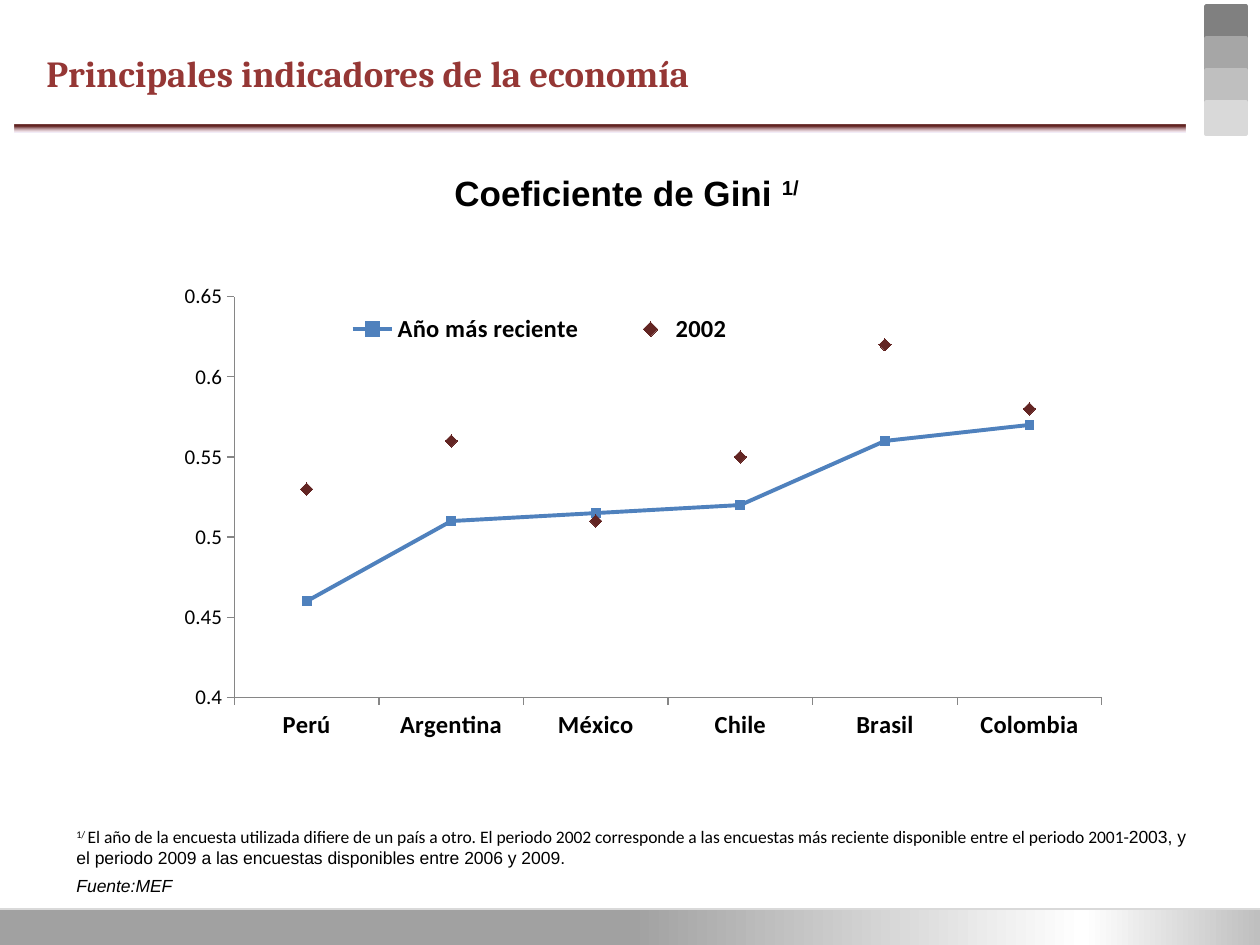
from copy import deepcopy

from pptx import Presentation
from pptx.chart.data import CategoryChartData
from pptx.dml.color import RGBColor
from pptx.enum.chart import XL_CHART_TYPE as CT, XL_LEGEND_POSITION as LP
from pptx.enum.chart import XL_MARKER_STYLE as MS, XL_TICK_MARK as TM
from pptx.enum.shapes import MSO_CONNECTOR as CONN, MSO_SHAPE as SHAPE
from pptx.oxml import parse_xml
from pptx.oxml.ns import nsdecls, qn
from pptx.util import Pt

SCALE = 914400 / 126
COUNTRIES = ["Perú", "Argentina", "México", "Chile", "Brasil", "Colombia"]
GINI = {
    "Año más reciente": [0.46, 0.51, 0.515, 0.52, 0.56, 0.57],
    "2002": [0.53, 0.56, 0.51, 0.55, 0.62, 0.58],
}


def px(*lengths):
    """Turn pixel lengths into EMU."""
    return [round(n * SCALE) for n in lengths]


def rgb(value):
    """Return the colour for a hex string."""
    return RGBColor.from_string(value)


def set_font(font, size, bold=False, name="Calibri", color="000000", italic=False):
    """Set the face, size, style and colour of a font."""
    font.name, font.size, font.bold, font.italic = name, Pt(size), bold, italic
    font.color.rgb = rgb(color)


def add_text(slide, box, runs, size, wrap=True, **fmt):
    """Add a text box from (text, font name, baseline) runs."""
    tf = slide.shapes.add_textbox(*px(*box)).text_frame
    tf.word_wrap = wrap
    p = tf.paragraphs[0]
    for text, name, baseline in runs:
        r = p.add_run()
        r.text = text
        set_font(r.font, size, name=name, **fmt)
        if baseline:
            r._r.get_or_add_rPr().set("baseline", str(baseline * 1000))


def add_rect(slide, box, fill=None):
    """Add a rectangle, filled and outlined when a colour is given."""
    sp = slide.shapes.add_shape(SHAPE.RECTANGLE, *px(*box))
    sp.shadow.inherit = False
    if fill:
        sp.fill.solid()
        sp.fill.fore_color.rgb = sp.line.color.rgb = rgb(fill)
        sp.line.width = Pt(2)
    else:
        sp.line.fill.background()
    return sp


def add_gradient(slide, box, stops, angle):
    """Add a rectangle with (position, colour, opacity) gradient stops."""
    sp = add_rect(slide, box)
    sp.fill.gradient()
    sp.fill.gradient_angle = 0
    grad = sp._element.spPr.find(qn("a:gradFill"))
    grad.find(qn("a:lin")).set("ang", str(angle * 60000))
    items = "".join(
        f'<a:gs pos="{pos * 1000}"><a:srgbClr val="{color}">'
        f'<a:alpha val="{alpha * 1000}"/></a:srgbClr></a:gs>'
        for pos, color, alpha in stops)
    grad.replace(grad.find(qn("a:gsLst")),
                 parse_xml(f'<a:gsLst {nsdecls("a")}>{items}</a:gsLst>'))


def set_layout(parent, index, box, inner=False):
    """Place a chart part by fractions of the chart area."""
    for old in parent.findall(qn("c:layout")):
        parent.remove(old)
    target = '<c:layoutTarget val="inner"/>' if inner else ""
    modes = '<c:xMode val="edge"/><c:yMode val="edge"/>'
    sizes = "".join(f'<c:{k} val="{v}"/>' for k, v in zip("xywh", box))
    parent.insert(index, parse_xml(
        f'<c:layout {nsdecls("c")}><c:manualLayout>{target}{modes}{sizes}'
        '</c:manualLayout></c:layout>'))


def move_to_second_axis(plot_area):
    """Move the last series to a hidden second pair of axes."""
    first = plot_area.find(qn("c:lineChart"))
    second = deepcopy(first)
    first.remove(first.findall(qn("c:ser"))[-1])
    second.remove(second.find(qn("c:ser")))
    first.addnext(second)
    axes = [plot_area.find(qn(tag)) for tag in ("c:catAx", "c:valAx")]
    ids = {ax.find(qn("c:axId")).get("val"): str(501 + i) for i, ax in enumerate(axes)}
    copies = [deepcopy(ax) for ax in axes]
    for part in [second, *copies]:
        for ref in part.findall(qn("c:axId")) + part.findall(qn("c:crossAx")):
            ref.set("val", ids[ref.get("val")])
    for ax in reversed(copies):
        ax.find(qn("c:delete")).set("val", "1")
        axes[-1].addnext(ax)
    copies[1].find(qn("c:crosses")).set("val", "max")


def add_gini_chart(slide, box):
    """Add the line chart of Gini coefficients."""
    data = CategoryChartData()
    data.categories = COUNTRIES
    for name, values in GINI.items():
        data.add_series(name, values)
    chart = slide.shapes.add_chart(CT.LINE_MARKERS, *px(*box), data).chart
    chart.has_title = False
    set_font(chart.font, 10)
    cat, val = chart.category_axis, chart.value_axis
    for axis, size, bold in ((cat, 14, True), (val, 12, False)):
        set_font(axis.tick_labels.font, size, bold)
        axis.major_tick_mark, axis.minor_tick_mark = TM.OUTSIDE, TM.NONE
        axis.has_major_gridlines = False
        axis.format.line.color.rgb = rgb("868686")
    val.minimum_scale, val.maximum_scale, val.major_unit = 0.4, 0.65, 0.05
    markers = ((MS.SQUARE, 5, "4F81BD"), (MS.DIAMOND, 7, "632523"))
    for s, (style, size, color) in zip(chart.plots[0].series, markers):
        s.smooth = False
        s.marker.style, s.marker.size = style, size
        s.marker.format.fill.solid()
        s.marker.format.fill.fore_color.rgb = rgb(color)
        s.marker.format.line.color.rgb = rgb(color)
        s.format.line.width = Pt(2.25)
        s.format.line.color.rgb = rgb(color)
    s.format.line.fill.background()
    chart.has_legend = True
    legend = chart.legend
    legend.position, legend.include_in_layout = LP.RIGHT, False
    set_font(legend.font, 14, True)
    set_layout(legend._element, 1, (0.18, 0.18, 0.46, 0.08))
    plot_area = chart._chartSpace.chart.plotArea
    set_layout(plot_area, 0, (0.106, 0.166, 0.864, 0.667), inner=True)
    move_to_second_axis(plot_area)


def add_footer(slide, left, top, width, height):
    """Add the grey band and the rule near its top edge."""
    stops = ((50, "A1A1A1", 100), (86, "FFFFFF", 100), (100, "BFBFBF", 100))
    add_gradient(slide, (left, top, width, height), stops, 0)
    rule = slide.shapes.add_connector(
        CONN.STRAIGHT, *px(left, top + 1, left + width, top + 1))
    rule.line.color.rgb, rule.line.width = rgb("D9D9D9"), Pt(0.75)
    rule._element.spPr.append(parse_xml(f'<a:effectLst {nsdecls("a")}/>'))


def add_header(slide, left, top, width, height):
    """Add the grey squares, the title and the red band below it."""
    side = 32
    for i, color in enumerate(("808080", "A6A6A6", "BFBFBF", "D9D9D9")):
        add_rect(slide, (left + width - 40, top + i * side, 40, side), color)
    stops = ((23, "632523", 100), (97, "FFEBFA", 43), (100, "85C2FF", 100))
    add_gradient(slide, (left, top + height - 8, 1171, 8), stops, 90)
    add_text(slide, (left + 19, top + 39, 922, 79),
             [("Principales indicadores de la economía", "Cambria", 0)],
             21, bold=True, color="953735")


def add_notes(slide, left, top, width):
    """Add the footnote and the source below the chart."""
    add_text(slide, (left, top, width, 55), [
        ("1/ ", "Calibri", 30),
        ("El año de la encuesta utilizada difiere de un país a otro. El periodo 2002 "
         "corresponde a las encuestas más reciente disponible entre el periodo 2001-",
         "Calibri", 0),
        ("2003, y el periodo 2009 a las encuestas disponibles entre 2006 y 2009.",
         "Arial", 0)], 10)
    add_text(slide, (left, top + 49, 171, 34), [("Fuente:MEF", "Arial", 0)],
             10, italic=True)


def main():
    """Build the slide and save it."""
    prs = Presentation()
    prs.slide_width, prs.slide_height = px(1260, 945)
    slide = prs.slides.add_slide(prs.slide_layouts[6])
    add_footer(slide, 0, 908, 1260, 37)
    add_header(slide, 15, 6, 1231, 127)
    add_text(slide, (442, 165, 374, 55),
             [("Coeficiente de Gini ", "Arial", 0), ("1/", "Arial", 30)],
             20, wrap=False, bold=True)
    add_notes(slide, 64, 820, 1142)
    add_gini_chart(slide, (128, 197, 1004, 601))
    prs.save("out.pptx")


if __name__ == "__main__":
    main()
